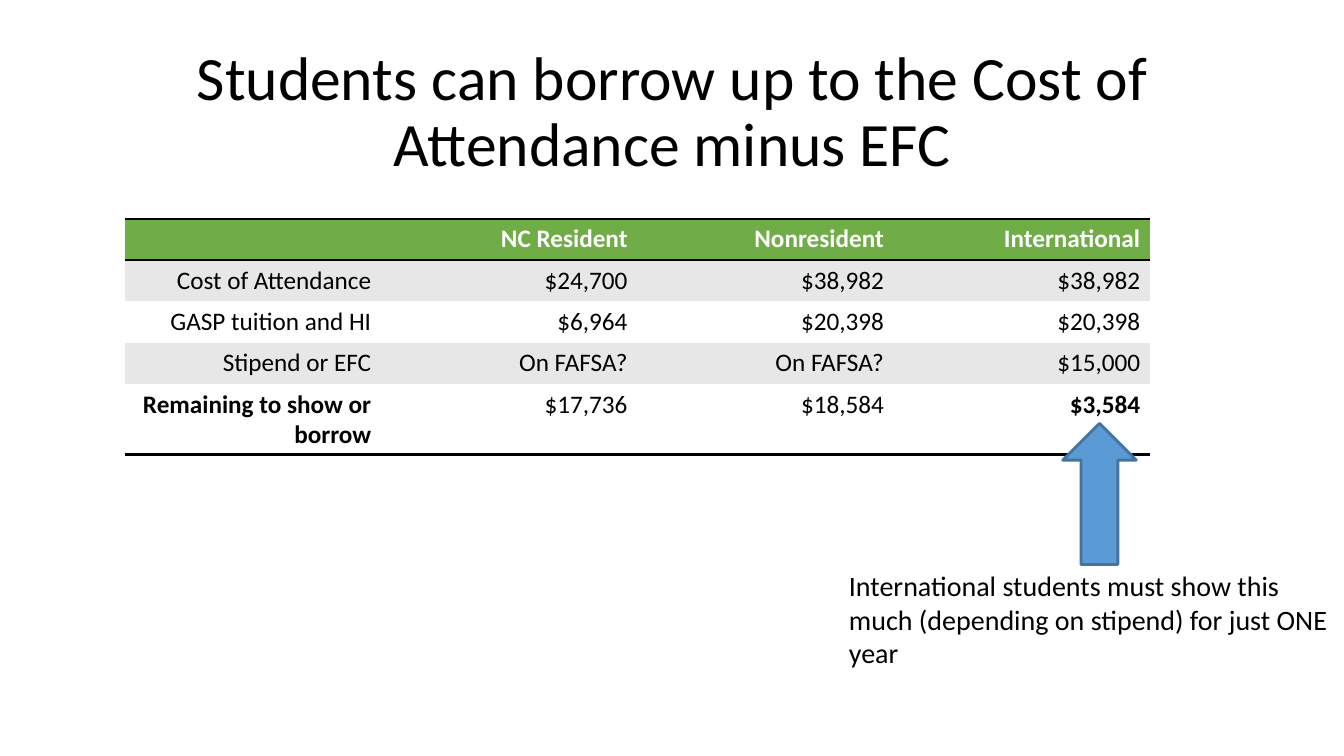
from lxml import etree
from pptx import Presentation
from pptx.dml.color import RGBColor
from pptx.enum.shapes import MSO_SHAPE
from pptx.enum.text import MSO_ANCHOR, PP_ALIGN
from pptx.oxml import parse_xml
from pptx.util import Inches, Pt

ARROW = MSO_SHAPE.UP_ARROW
MIDDLE = MSO_ANCHOR.MIDDLE
CENTER, LEFT, RIGHT = PP_ALIGN.CENTER, PP_ALIGN.LEFT, PP_ALIGN.RIGHT
NS = "http://schemas.openxmlformats.org/drawingml/2006/main"
PLAIN = "{2D5ABB26-0587-4C30-8999-92F81FD0307C}"  # table style without grid
BLACK, WHITE, GREEN, GREY = "000000", "FFFFFF", "70AD47", "E7E7E7"


def paint(fmt, color):
    """Give a fill a solid colour."""
    fmt.solid()
    fmt.fore_color.rgb = RGBColor.from_string(color)


def write(frame, text, size, align, color=BLACK, bold=False):
    """Set the text of a frame and format its only paragraph."""
    frame.text = text
    para = frame.paragraphs[0]
    para.alignment = align
    for run in para.runs:
        run.font.name = "Calibri"
        run.font.size = Pt(size)
        run.font.bold = bold
        paint(run.font.fill, color)


prs = Presentation()
prs.slide_width, prs.slide_height = Inches(13.33), Inches(7.5)
slide = prs.slides.add_slide(prs.slide_layouts[5])
paint(slide.background.fill, WHITE)

# Title and note
title = slide.shapes.title
title.left, title.top = Inches(0.92), Inches(0.4)
title.width, title.height = Inches(11.5), Inches(1.45)
note = slide.shapes.add_textbox(Inches(8.37), Inches(5.59), Inches(4.96), Inches(1.11))
for box in (title, note):
    frame = box.text_frame
    frame.word_wrap = True
    frame.margin_left = frame.margin_right = Inches(0.05)
    frame.margin_top = frame.margin_bottom = Inches(0.05)
write(title.text_frame, "Students can borrow up to the Cost of Attendance minus EFC", 44, CENTER)
title.text_frame.vertical_anchor = MIDDLE
title.text_frame.paragraphs[0].line_spacing = 0.9
write(note.text_frame, "International students must show this much "
      "(depending on stipend) for just ONE year", 20, LEFT)

# Cost table
costs = [
    ["", "NC Resident", "Nonresident", "International"],
    ["Cost of Attendance", "$24,700", "$38,982", "$38,982"],
    ["GASP tuition and HI", "$6,964", "$20,398", "$20,398"],
    ["Stipend or EFC", "On FAFSA?", "On FAFSA?", "$15,000"],
    ["Remaining to show or borrow", "$17,736", "$18,584", "$3,584"],
]
last = len(costs) - 1
strong = {(last, 0), (last, 3)}
rules = {0: ("lnT", "lnB"), last: ("lnB",)}

table = slide.shapes.add_table(len(costs), 4, Inches(1.24), Inches(2.17),
                               Inches(10.17), Inches(2.05)).table
table._tbl.tblPr.find(f"{{{NS}}}tableStyleId").text = PLAIN
for row in table.rows:
    row.height = Inches(0.41)

for r, row in enumerate(costs):
    head = r == 0
    shade = GREEN if head else GREY if r % 2 else WHITE
    for c, text in enumerate(row):
        cell = table.cell(r, c)
        write(cell.text_frame, text, 18, RIGHT, WHITE if head else BLACK,
              head or (r, c) in strong)
        props = cell._tc.get_or_add_tcPr()
        for side in rules.get(r, ()):
            line = parse_xml(f'<a:{side} xmlns:a="{NS}" w="{Pt(2)}"/>')
            solid = etree.SubElement(line, f"{{{NS}}}solidFill")
            etree.SubElement(solid, f"{{{NS}}}srgbClr", val=BLACK)
            props.append(line)
        paint(cell.fill, shade)

# Arrow to the remaining amount
arrow = slide.shapes.add_shape(ARROW, Inches(10.54), Inches(4.2), Inches(0.73), Inches(1.4))
arrow.shadow.inherit = False
paint(arrow.fill, "5B9BD5")
paint(arrow.line.fill, "43739E")
arrow.line.width = Pt(2)

prs.save("out.pptx")
